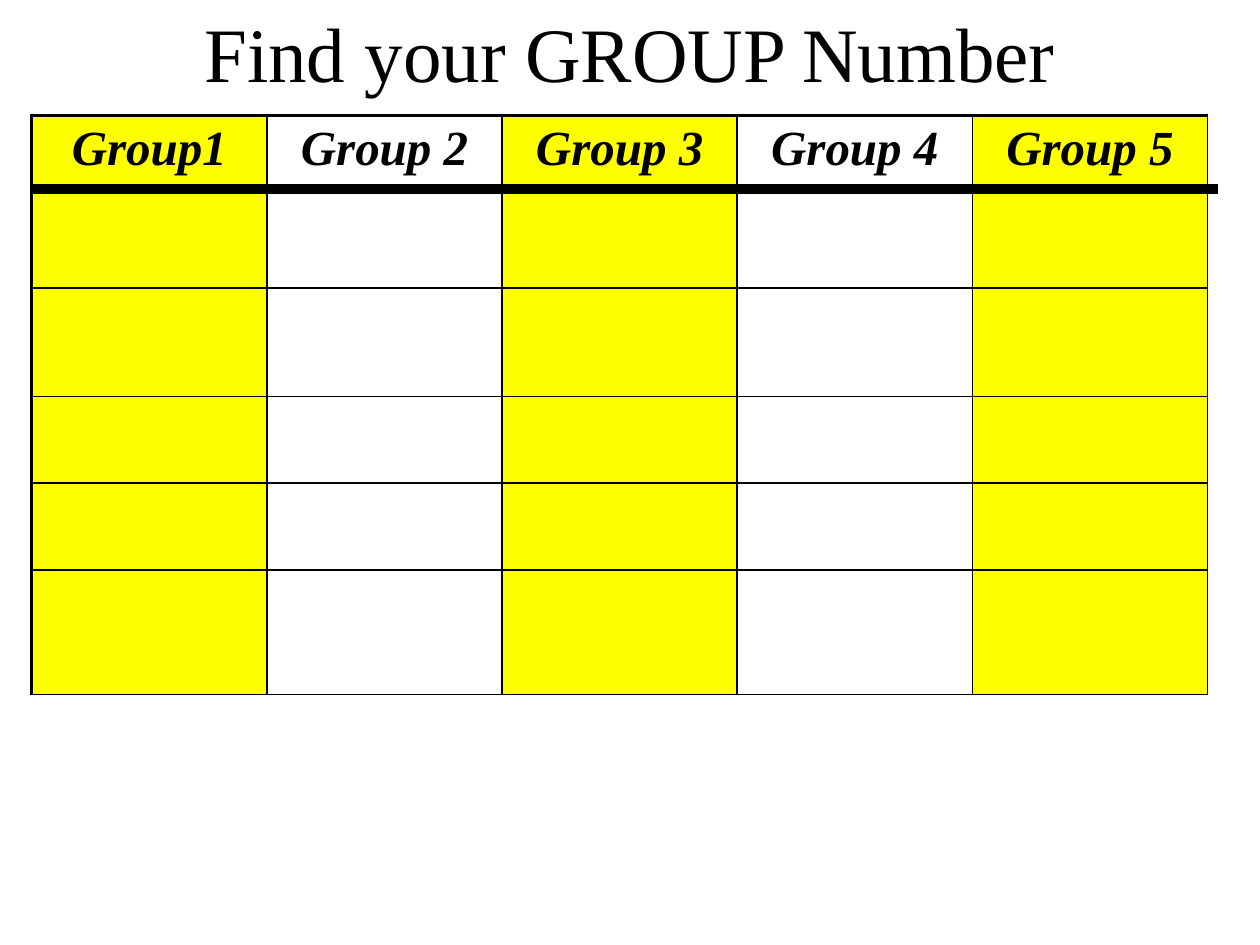
import dataclasses

import lxml.etree
import pptx
import pptx.dml.color
import pptx.enum.shapes
import pptx.enum.text
import pptx.oxml.ns
import pptx.util
from pptx.util import Cm

COLORS = {"ink": "000000", "stripe": "FFFF00"}
FONT = "Times New Roman"
NO_STYLE = "{2D5ABB26-0587-4C30-8999-92F81FD0307C}"
ROW_HEIGHTS = [1.52, 1.96, 2.18, 1.75, 1.75, 2.51]
COLUMN_WIDTH = 4.74


@dataclasses.dataclass
class Group:
    name: str
    striped: bool


GROUPS = [
    Group("Group1", True),
    Group("Group 2", False),
    Group("Group 3", True),
    Group("Group 4", False),
    Group("Group 5", True),
]


def rgb(name: str) -> pptx.dml.color.RGBColor:
    return pptx.dml.color.RGBColor.from_string(COLORS[name])


def add_child(parent, tag: str, **attrs: str):
    child = lxml.etree.SubElement(parent, pptx.oxml.ns.qn(tag))
    for key, value in attrs.items():
        child.set(key, value)
    return child


def format_text(p, size: float, emphasis: bool = False) -> None:
    p.alignment = pptx.enum.text.PP_ALIGN.CENTER
    for r in p.runs:
        r.font.name = FONT
        r.font.size = pptx.util.Pt(size)
        r.font.bold = r.font.italic = emphasis
        r.font.color.rgb = rgb("ink")


def set_borders(cell, widths: dict[str, float]) -> None:
    tc_pr = cell._tc.get_or_add_tcPr()
    for side, width in widths.items():
        ln = add_child(tc_pr, f"a:ln{side}", w=str(pptx.util.Pt(width)))
        fill = add_child(ln, "a:solidFill")
        add_child(fill, "a:srgbClr", val=COLORS["ink"])


def add_title(s, text: str) -> None:
    sp = s.shapes.title
    sp.left, sp.top, sp.width, sp.height = Cm(1.9), Cm(0.2), Cm(21.6), Cm(1.7)
    tf = sp.text_frame
    tf.text = text
    tf.vertical_anchor = pptx.enum.text.MSO_ANCHOR.MIDDLE
    format_text(tf.paragraphs[0], 44)


def add_header(cell, text: str) -> None:
    cell.text = text
    p = cell.text_frame.paragraphs[0]
    format_text(p, 28, emphasis=True)
    spacing = add_child(p._p.get_or_add_pPr(), "a:spcBef")
    add_child(spacing, "a:spcPct", val="20000")


def add_group_table(s, groups: list[Group]) -> None:
    frame = s.shapes.add_table(
        len(ROW_HEIGHTS), len(groups), Cm(0.64), Cm(2.33),
        Cm(COLUMN_WIDTH * len(groups)), Cm(sum(ROW_HEIGHTS)))
    table = frame.table
    table.first_row = table.horz_banding = False
    table._tbl.tblPr.find(pptx.oxml.ns.qn("a:tableStyleId")).text = NO_STYLE
    for row, height in zip(table.rows, ROW_HEIGHTS):
        row.height = Cm(height)
    for j, group in enumerate(groups):
        table.columns[j].width = Cm(COLUMN_WIDTH)
        add_header(table.cell(0, j), group.name)
        for i in range(len(ROW_HEIGHTS)):
            cell = table.cell(i, j)
            set_borders(cell, {"L": 1 if j else 2.25, "R": 1,
                               "T": 1 if i else 2.25, "B": 1})
            if group.striped:
                cell.fill.solid()
                cell.fill.fore_color.rgb = rgb("stripe")
            else:
                cell.fill.background()


def add_header_rule(s) -> None:
    line = s.shapes.add_connector(
        pptx.enum.shapes.MSO_CONNECTOR.STRAIGHT,
        Cm(0.64), Cm(3.81), Cm(24.55), Cm(3.81))
    line.line.color.rgb = rgb("ink")
    line.line.width = pptx.util.Pt(6)
    add_child(line._element.spPr, "a:effectLst")


def main() -> None:
    prs = pptx.Presentation()
    prs.slide_width, prs.slide_height = Cm(25.4), Cm(19.05)
    s = prs.slides.add_slide(prs.slide_layouts[5])
    add_title(s, "Find your GROUP Number")
    add_group_table(s, GROUPS)
    add_header_rule(s)
    prs.save("out.pptx")


if __name__ == "__main__":
    main()
